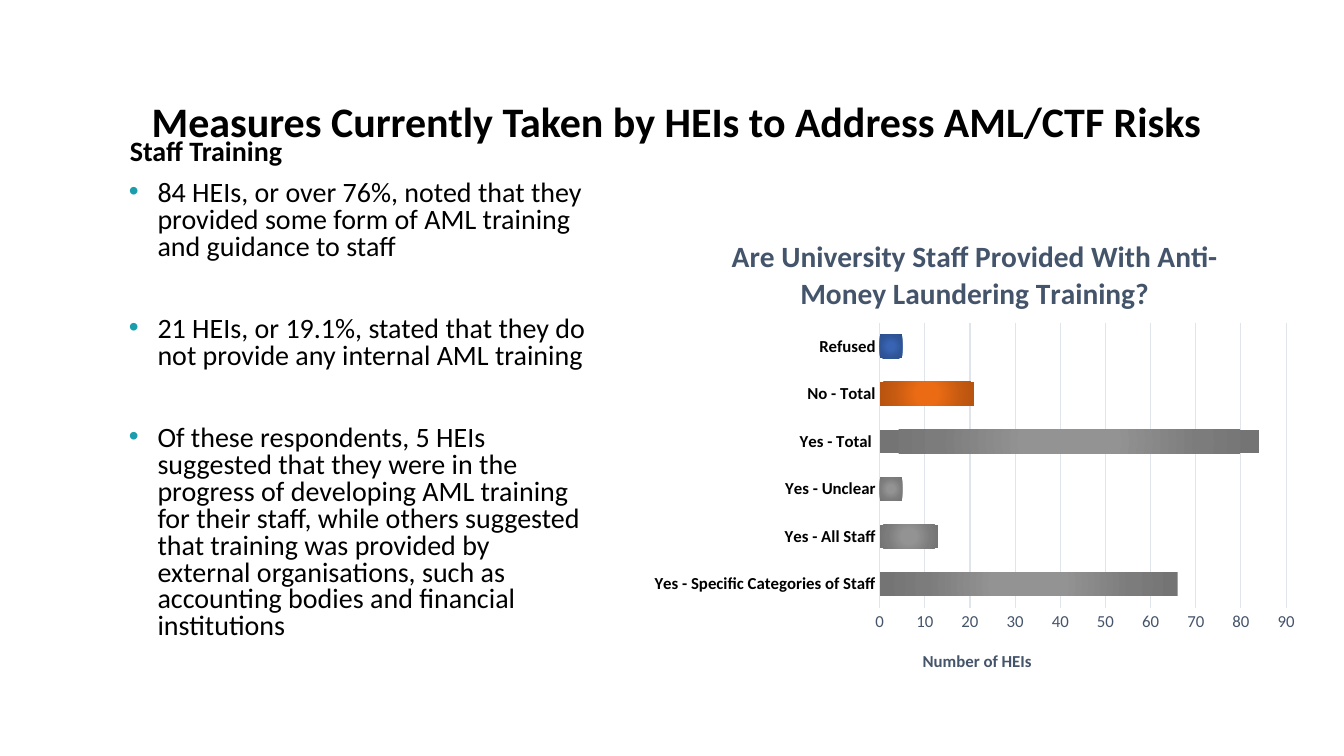
from lxml import etree
from pptx import Presentation
from pptx.chart.data import CategoryChartData
from pptx.dml.color import RGBColor
from pptx.enum.chart import XL_CHART_TYPE as ChartType, XL_TICK_MARK as TickMark
from pptx.enum.text import MSO_ANCHOR as Anchor, MSO_AUTO_SIZE as AutoSize, PP_ALIGN as Align
from pptx.oxml.ns import qn
from pptx.util import Pt

COLORS = {"text": "000000", "bullet": "1A9DAC", "axis": "44546A",
          "grid": "E0E5EB", "series": "559BDB"}
GLOWS = {"yes": ("939393", "939393", "7C7C7C", "747474"),
         "no": ("EA6B14", "EA6B14", "C55A11", "B85410"),
         "refused": ("3864B3", "3864B3", "2F5597", "2C4F8C")}
GLOW_STOPS = (0, 23, 69, 97)

STAFF_TRAINING = [
    "84 HEIs, or over 76%, noted that they provided some form of AML training "
    "and guidance to staff",
    "21 HEIs, or 19.1%, stated that they do not provide any internal AML training",
    "Of these respondents, 5 HEIs suggested that they were in the progress of "
    "developing AML training for their staff, while others suggested that training "
    "was provided by external organisations, such as accounting bodies and "
    "financial institutions",
]
ANSWERS = [
    ("Yes - Specific Categories of Staff", 66, "yes"),
    ("Yes - All Staff", 13, "yes"),
    ("Yes - Unclear", 5, "yes"),
    ("Yes - Total ", 84, "yes"),
    ("No - Total", 21, "no"),
    ("Refused", 5, "refused"),
]


def assign(target, **values):
    for name, value in values.items():
        setattr(target, name, value)


def style_font(font, size, color="text", bold=False):
    assign(font, name="Calibri", size=Pt(size), bold=bold)
    font.color.rgb = RGBColor.from_string(COLORS[color])


def place(shape, box):
    assign(shape, **dict(zip(("left", "top", "width", "height"), map(Pt, box))))


def add_child(parent, tag, **attributes):
    return etree.SubElement(parent, qn(tag), attributes)


def place_text(placeholder, box, anchor):
    place(placeholder, box)
    frame = placeholder.text_frame
    assign(frame, margin_left=0, margin_top=0, margin_right=0, margin_bottom=0,
           word_wrap=True, auto_size=AutoSize.NONE, vertical_anchor=anchor)
    return frame


def build_title(placeholder, box):
    heading = place_text(placeholder, box, Anchor.MIDDLE).paragraphs[0]
    heading.text = "Measures Currently Taken by HEIs to Address AML/CTF Risks"
    assign(heading, alignment=Align.CENTER, line_spacing=1.5)
    style_font(heading.runs[0].font, 30, bold=True)


def build_training_list(placeholder, box):
    frame = place_text(placeholder, box, Anchor.TOP)
    for index, wording in enumerate(["Staff Training", *STAFF_TRAINING]):
        item = frame.paragraphs[0] if index == 0 else frame.add_paragraph()
        item.text = wording
        assign(item, alignment=Align.LEFT, line_spacing=0.8,
               space_before=Pt(39.5 if index > 1 else 10), space_after=Pt(0))
        style_font(item.runs[0].font, 20, bold=index == 0)
        properties = item._p.get_or_add_pPr()
        if index == 0:
            properties.set("marL", str(Pt(0.7)))
            properties.set("indent", "0")
            add_child(properties, "a:buNone")
        else:
            properties.set("marL", str(Pt(20.5)))
            properties.set("indent", str(-Pt(20.5)))
            bullet_color = add_child(properties, "a:buClr")
            add_child(bullet_color, "a:srgbClr", val=COLORS["bullet"])
            add_child(properties, "a:buFont", typeface="Arial")
            add_child(properties, "a:buChar", char="•")


def set_layout(part, **fractions):
    """Pin a chart part at fractions of the chart's width and height."""
    for old in part.findall(qn("c:layout")):
        part.remove(old)
    layout = etree.Element(qn("c:layout"))
    part.insert(0 if part.find(qn("c:tx")) is None else 1, layout)
    manual = add_child(layout, "c:manualLayout")
    if "w" in fractions:
        add_child(manual, "c:layoutTarget", val="inner")
    for axis in ("x", "y"):
        add_child(manual, f"c:{axis}Mode", val="edge")
    for name, value in fractions.items():
        add_child(manual, f"c:{name}", val=str(value))


def set_chart_caption(caption, wording, size):
    paragraph = caption.text_frame.paragraphs[0]
    paragraph.text = wording
    style_font(paragraph.runs[0].font, size, "axis", bold=True)


def add_glow(gradient, hues):
    """Turn a gradient fill into a radial one, brightest at the centre."""
    gradient.clear()
    stops = add_child(gradient, "a:gsLst")
    for position, hue in zip(GLOW_STOPS, hues):
        stop = add_child(stops, "a:gs", pos=str(position * 1000))
        add_child(stop, "a:srgbClr", val=hue)
    circle = add_child(gradient, "a:path", path="circle")
    add_child(circle, "a:fillToRect", **dict.fromkeys("ltrb", "50000"))


def style_bars(plot):
    assign(plot, gap_width=100, vary_by_categories=False)
    bars = plot.series[0]
    bars.format.fill.solid()
    bars.format.fill.fore_color.rgb = RGBColor.from_string(COLORS["series"])
    for index in range(len(ANSWERS)):
        bars.points[index].format.fill.gradient()
    gradients = list(bars._element.iter(qn("a:gradFill")))
    for gradient, (_, _, glow) in zip(gradients, ANSWERS):
        add_glow(gradient, GLOWS[glow])


def style_axes(answers, counts):
    assign(answers, has_major_gridlines=False)
    assign(counts, minimum_scale=0, maximum_scale=90, major_unit=10,
           has_major_gridlines=True)
    for axis in (answers, counts):
        assign(axis, major_tick_mark=TickMark.NONE, minor_tick_mark=TickMark.NONE)
    for line in (answers.format.line, counts.major_gridlines.format.line):
        line.width = Pt(0.75)
        line.color.rgb = RGBColor.from_string(COLORS["grid"])
    counts.format.line.fill.background()
    style_font(answers.tick_labels.font, 12, bold=True)
    style_font(counts.tick_labels.font, 12, "axis")
    set_chart_caption(counts.axis_title, "Number of HEIs", 12)


def build_training_chart(slide, box):
    data = CategoryChartData()
    data.categories = [answer for answer, _, _ in ANSWERS]
    data.add_series("Series 1", [count for _, count, _ in ANSWERS])
    chart = slide.shapes.add_chart(
        ChartType.BAR_CLUSTERED, *map(Pt, box), data).chart
    assign(chart, has_legend=False, has_title=True)
    style_font(chart.font, 10)
    set_chart_caption(
        chart.chart_title,
        "Are University Staff Provided With Anti-Money Laundering Training?", 21)
    chart.chart_title.include_in_layout = False
    style_axes(chart.category_axis, chart.value_axis)
    style_bars(chart.plots[0])
    space = chart._chartSpace
    set_layout(space.xpath("c:chart/c:title")[0], x=0.13, y=0.05)
    set_layout(space.xpath("//c:valAx/c:title")[0], x=0.42, y=0.91)
    set_layout(space.xpath("c:chart/c:plotArea")[0], x=0.36, y=0.24, w=0.61, h=0.59)


def main():
    deck = Presentation()
    assign(deck, slide_width=Pt(960), slide_height=Pt(540))
    slide = deck.slides.add_slide(deck.slide_layouts[1])
    build_title(slide.shapes.title, (92, 37.5, 783, 80))
    build_training_list(slide.placeholders[1], (92, 100, 329, 363))
    build_training_chart(slide, (457, 147.5, 476, 345.5))
    deck.save("out.pptx")


if __name__ == "__main__":
    main()
